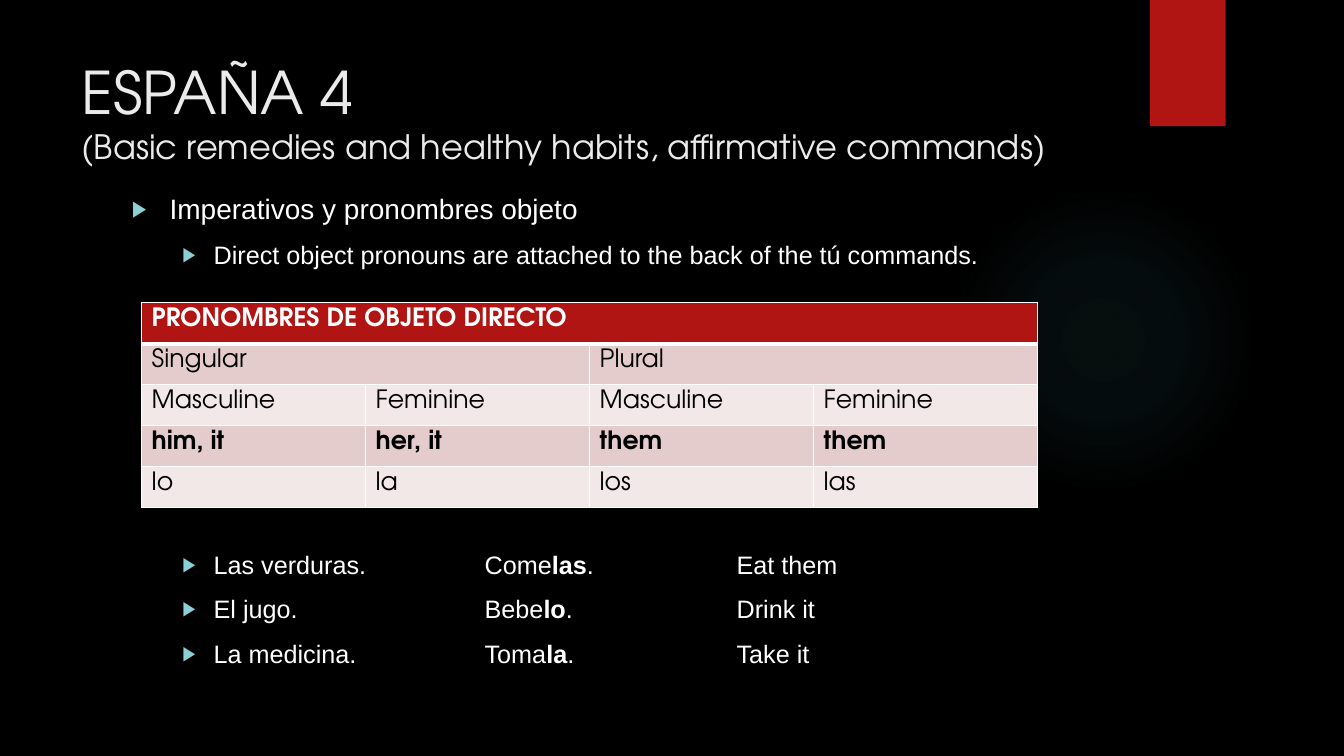
from dataclasses import dataclass
from typing import Any

from lxml.etree import SubElement
from pptx import Presentation
from pptx.dml.color import RGBColor
from pptx.enum.shapes import MSO_SHAPE as Preset
from pptx.enum.text import MSO_ANCHOR as Anchor, MSO_AUTO_SIZE as AutoSize, PP_ALIGN as Align
from pptx.oxml.ns import qn
from pptx.util import Cm, Pt

COLOURS: dict[str, str] = {
    "background": "000000", "glow": "50B9C1", "red": "B01513", "title": "EBEBEB",
    "white": "FFFFFF", "black": "000000", "bullet": "8AD0D6",
    "dark band": "E4CCCC", "light band": "F2E8E7",
}
HEADING_FONT = "TeX Gyre Adventor"
BODY_FONT = "Arial"
INDENTS = ((0.95, -0.95), (2.06, -0.79))
TAB_STOPS = (8.89, 15.24)
GLOW_STOPS = ((0, 7), (36, 6), (69, 0))


@dataclass(frozen=True)
class Bullet:
    """A list line whose spans alternate between regular and bold."""
    spans: tuple[str, ...]
    level: int = 1
    size: int = 18
    before: float = 10


@dataclass(frozen=True)
class Row:
    """A table row whose cells share the full width equally."""
    cells: tuple[str, ...]
    fill: str
    bold: bool = False
    text: str = "black"
    top: int = 1
    bottom: int = 1


BULLETS = (
    Bullet(("Imperativos y pronombres objeto",), level=0, size=20, before=0),
    Bullet(("Direct object pronouns are attached to the back of the tú commands.",)),
    Bullet(("Las verduras.\tCome", "las", ".\tEat them"), before=200),
    Bullet(("El jugo.\tBebe", "lo", ".\tDrink it")),
    Bullet(("La medicina.\tToma", "la", ".\tTake it")),
)
ROWS = (
    Row(("PRONOMBRES DE OBJETO DIRECTO",), "red", True, "white", bottom=3),
    Row(("Singular", "Plural"), "dark band", top=3),
    Row(("Masculine", "Feminine") * 2, "light band"),
    Row(("him, it", "her, it", "them", "them"), "dark band", True),
    Row(("lo", "la", "los", "las"), "light band"),
)


def colour(name: str) -> RGBColor:
    """Look up a named colour."""
    return RGBColor.from_string(COLOURS[name])


def apply(target: Any, **values: Any) -> None:
    """Set every given attribute on the target."""
    for name, value in values.items():
        setattr(target, name, value)


def place(box: Any, left: float, top: float, width: float, height: float) -> None:
    """Position a shape, in centimetres."""
    apply(box, left=Cm(left), top=Cm(top), width=Cm(width), height=Cm(height))


def child(parent: Any, tag: str, **values: Any) -> Any:
    """Append a drawing element with attributes."""
    return SubElement(parent, qn(tag), {name: str(value) for name, value in values.items()})


def add_span(para: Any, text: str, tint: str, **style: Any) -> None:
    """Add a formatted run."""
    span = para.add_run()
    span.text = text
    apply(span.font, **style)
    span.font.color.rgb = colour(tint)


def add_decor(page: Any, preset: Preset, at: tuple[float, ...], tint: str) -> Any:
    """Add a plain shape behind the text."""
    shape = page.shapes.add_shape(preset, *map(Cm, at))
    shape.shadow.inherit = False
    shape.fill.solid()
    shape.fill.fore_color.rgb = colour(tint)
    shape.line.fill.background()
    page.shapes._spTree.insert(2, shape._element)
    return shape


def add_glow(page: Any) -> None:
    """Add the faint round glow."""
    glow = add_decor(page, Preset.OVAL, (23.9, 4.65, 7.82, 7.82), "glow")
    properties = glow._element.spPr
    solid = properties.find(qn("a:solidFill"))
    gradient = child(properties, "a:gradFill", rotWithShape=1)
    properties.replace(solid, gradient)
    stops = child(gradient, "a:gsLst")
    for position, alpha in GLOW_STOPS:
        stop = child(stops, "a:gs", pos=position * 1000)
        tint = child(stop, "a:srgbClr", val=COLOURS["glow"])
        child(tint, "a:alpha", val=alpha * 1000)
    focus = child(gradient, "a:path", path="circle")
    child(focus, "a:fillToRect", l=50000, t=50000, r=50000, b=50000)


def fill_title(box: Any) -> None:
    """Write the two-line title."""
    place(box, 1.8, 1.27, 26.14, 3.89)
    apply(box.text_frame, word_wrap=True, auto_size=AutoSize.NONE, vertical_anchor=Anchor.TOP)
    para = box.text_frame.paragraphs[0]
    para.alignment = Align.LEFT
    add_span(para, "ESPAÑA 4", "title", name=HEADING_FONT, size=Pt(42))
    para.add_line_break()
    add_span(para, "(Basic remedies and healthy habits, affirmative commands)", "title",
             name=HEADING_FONT, size=Pt(24))


def format_bullet(para: Any, bullet: Bullet) -> None:
    """Set the indent, marker and tab stops of a list line."""
    apply(para, level=bullet.level, space_before=Pt(bullet.before), alignment=Align.LEFT)
    properties = para._p.get_or_add_pPr()
    margin, indent = INDENTS[bullet.level]
    properties.set("marL", str(Cm(margin)))
    properties.set("indent", str(Cm(indent)))
    child(child(properties, "a:buClr"), "a:srgbClr", val=COLOURS["bullet"])
    child(properties, "a:buSzPct", val=80000)
    child(properties, "a:buFont", typeface=BODY_FONT)
    child(properties, "a:buChar", char="▶")
    if len(bullet.spans) > 1:
        tabs = child(properties, "a:tabLst")
        for stop in TAB_STOPS:
            child(tabs, "a:tab", pos=Cm(stop), algn="l")


def fill_body(box: Any) -> None:
    """Write the list around the table."""
    place(box, 3.07, 4.7, 27.74, 13.61)
    frame = box.text_frame
    apply(frame, word_wrap=True, auto_size=AutoSize.NONE, vertical_anchor=Anchor.TOP)
    for index, bullet in enumerate(BULLETS):
        para = frame.add_paragraph() if index else frame.paragraphs[0]
        format_bullet(para, bullet)
        for order, text in enumerate(bullet.spans):
            add_span(para, text, "white", name=BODY_FONT, size=Pt(bullet.size), bold=order % 2 == 1)


def format_cell(cell: Any, row: Row) -> None:
    """Set the borders, margins and fill of a cell."""
    properties = cell._tc.get_or_add_tcPr()
    for side, width in (("L", 1), ("R", 1), ("T", row.top), ("B", row.bottom)):
        line = child(properties, f"a:ln{side}", w=Pt(width))
        child(child(line, "a:solidFill"), "a:srgbClr", val=COLOURS["white"])
    apply(cell, margin_top=Cm(0.13), margin_bottom=Cm(0.1), vertical_anchor=Anchor.TOP)
    cell.fill.solid()
    cell.fill.fore_color.rgb = colour(row.fill)


def add_pronouns(page: Any) -> None:
    """Add the table of direct object pronouns."""
    columns = max(len(row.cells) for row in ROWS)
    table = page.shapes.add_table(len(ROWS), columns, Cm(3.57), Cm(7.63), Cm(22.58), Cm(5.15)).table
    for index, row in enumerate(ROWS):
        for column in range(columns):
            format_cell(table.cell(index, column), row)
        width = columns // len(row.cells)
        for order, text in enumerate(row.cells):
            cell = table.cell(index, order * width)
            if width > 1:
                cell.merge(table.cell(index, (order + 1) * width - 1))
            add_span(cell.text_frame.paragraphs[0], text, row.text,
                     name=HEADING_FONT, size=Pt(18), bold=row.bold)


def main() -> None:
    """Build and save the deck."""
    deck = Presentation()
    apply(deck, slide_width=Cm(33.87), slide_height=Cm(19.05))
    page = deck.slides.add_slide(deck.slide_layouts[1])
    page.background.fill.solid()
    page.background.fill.fore_color.rgb = colour("background")
    add_decor(page, Preset.RECTANGLE, (28.98, 0, 1.91, 3.18), "red")
    add_glow(page)
    fill_title(page.shapes.title)
    fill_body(page.placeholders[1])
    add_pronouns(page)
    deck.save("out.pptx")


if __name__ == "__main__":
    main()
